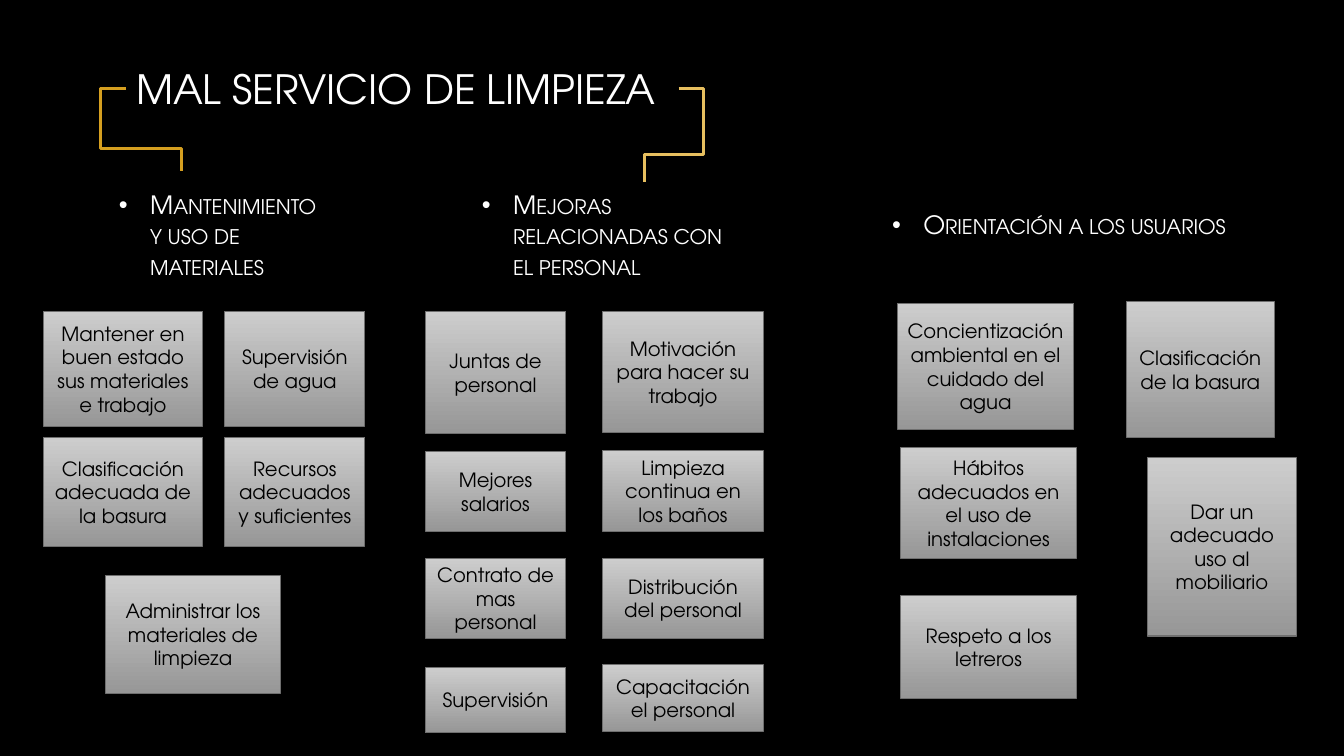
from lxml import etree
from pptx import Presentation
from pptx.dml.color import RGBColor
from pptx.enum.shapes import MSO_CONNECTOR, MSO_SHAPE
from pptx.enum.text import MSO_ANCHOR, MSO_AUTO_SIZE, PP_ALIGN
from pptx.oxml.ns import qn
from pptx.util import Inches, Pt

FONT = "TeX Gyre Adventor"


def color(hex_value):
    return RGBColor.from_string(hex_value)


def write_text(shape, text, size, hex_value, alignment):
    """Fill the shape with one vertically centred paragraph and return it."""
    frame = shape.text_frame
    frame_format = {
        "word_wrap": True,
        "auto_size": MSO_AUTO_SIZE.NONE,
        "vertical_anchor": MSO_ANCHOR.MIDDLE,
    }
    for name, value in frame_format.items():
        setattr(frame, name, value)
    paragraph = frame.paragraphs[0]
    paragraph.alignment = alignment
    run = paragraph.add_run()
    run.text = text
    for name, value in {"name": FONT, "size": Pt(size), "bold": False}.items():
        setattr(run.font, name, value)
    run.font.color.rgb = color(hex_value)
    return paragraph


presentation = Presentation()
presentation.slide_width = Inches(13.33)
presentation.slide_height = Inches(7.5)
slide = presentation.slides.add_slide(presentation.slide_layouts[3])
slide.background.fill.solid()
slide.background.fill.fore_color.rgb = color("000000")

# Title and the three headings
title, maintenance, staff = slide.placeholders
users = slide.shapes.add_textbox(0, 0, 0, 0)
users.text_frame.margin_bottom = Inches(0.41)

headings = [
    (maintenance, "Mantenimiento y uso de materiales", 1.08, 1.81, 2.31, 1.04),
    (staff, "Mejoras relacionadas con el personal", 4.68, 1.81, 2.78, 1.04),
    (users, "Orientación a los usuarios", 8.75, 1.96, 3.6, 0.9),
]
for shape, text, *place in [(title, "MAL SERVICIO DE LIMPIEZA", 1.25, 0.5, 5.48, 0.75), *headings]:
    shape.left, shape.top, shape.width, shape.height = map(Inches, place)
    is_title = shape is title
    paragraph = write_text(shape, text, 28.8 if is_title else 18, "FFFFFF", PP_ALIGN.LEFT)
    if is_title:
        continue
    properties = paragraph._p.get_or_add_pPr()
    properties.set("marL", str(Inches(0.31)))
    properties.set("indent", str(-Inches(0.31)))
    bullet_color = etree.SubElement(properties, qn("a:buClr"))
    etree.SubElement(bullet_color, qn("a:srgbClr"), val="FFFFFF")
    etree.SubElement(properties, qn("a:buFont"), typeface="Arial")
    etree.SubElement(properties, qn("a:buChar"), char="•")
    paragraph.space_before = Pt(0)
    paragraph.space_after = Pt(6)
    paragraph.runs[0]._r.get_or_add_rPr().set("cap", "small")

# Actions under each heading: left, width, then (text, top, height)
columns = [
    (0.43, 1.58, [
        ("Mantener en buen estado sus materiales e trabajo", 3.09, 1.14),
        ("Clasificación adecuada de la basura", 4.34, 1.08),
    ]),
    (2.23, 1.39, [
        ("Supervisión de agua", 3.09, 1.14),
        ("Recursos adecuados y suficientes", 4.34, 1.08),
    ]),
    (1.05, 1.73, [("Administrar los materiales de limpieza", 5.71, 1.17)]),
    (4.22, 1.39, [
        ("Juntas de personal", 3.09, 1.21),
        ("Mejores salarios", 4.48, 0.79),
        ("Contrato de mas personal", 5.54, 0.79),
        ("Supervisión", 6.62, 0.65),
    ]),
    (5.98, 1.59, [
        ("Motivación para hacer su trabajo", 3.09, 1.2),
        ("Limpieza continua en los baños", 4.47, 0.8),
        ("Distribución del personal", 5.54, 0.79),
        ("Capacitación el personal", 6.59, 0.67),
    ]),
    (8.9, 1.75, [("Concientización ambiental en el cuidado del agua", 3.01, 1.25)]),
    (8.93, 1.75, [
        ("Hábitos adecuados en el uso de instalaciones", 4.44, 1.1),
        ("Respeto a los letreros", 5.91, 1.02),
    ]),
    (11.17, 1.47, [("Clasificación de la basura", 2.99, 1.35)]),
    (11.38, 1.48, [("Dar un adecuado uso al mobiliario", 4.54, 1.77)]),
]
for left, width, actions in columns:
    for text, top, height in actions:
        box = slide.shapes.add_shape(
            MSO_SHAPE.RECTANGLE, Inches(left), Inches(top), Inches(width), Inches(height))
        box.shadow.inherit = False
        box.fill.gradient()
        box.fill.gradient_angle = 270
        for stop, position, shade in zip(box.fill.gradient_stops, (0, 1), ("CDCDCD", "979797")):
            stop.position = position
            stop.color.rgb = color(shade)
        box.line.color.rgb = color("6F6F6F")
        box.line.width = Pt(0.75)
        write_text(box, text, 14, "000000", PP_ALIGN.CENTER)

# Brackets from the title to the first two headings: ends, bend ratios, colour
brackets = [
    ((1.25, 0.88, 1.8, 1.7), (-45800, 72600), "D59F20"),
    ((6.73, 0.88, 6.39, 1.81), (-72900, 70000), "E7BF5F"),
]
for ends, bends, hex_value in brackets:
    connector = slide.shapes.add_connector(MSO_CONNECTOR.ELBOW, *map(Inches, ends))
    connector.line.color.rgb = color(hex_value)
    connector.line.width = Pt(2)
    shape_properties = connector._element.spPr
    etree.SubElement(shape_properties, qn("a:effectLst"))
    geometry = shape_properties.find(qn("a:prstGeom"))
    geometry.set("prst", "bentConnector4")
    adjustments = geometry.find(qn("a:avLst"))
    for number, bend in enumerate(bends, start=1):
        etree.SubElement(adjustments, qn("a:gd"), name=f"adj{number}", fmla=f"val {bend}")

presentation.save("out.pptx")
